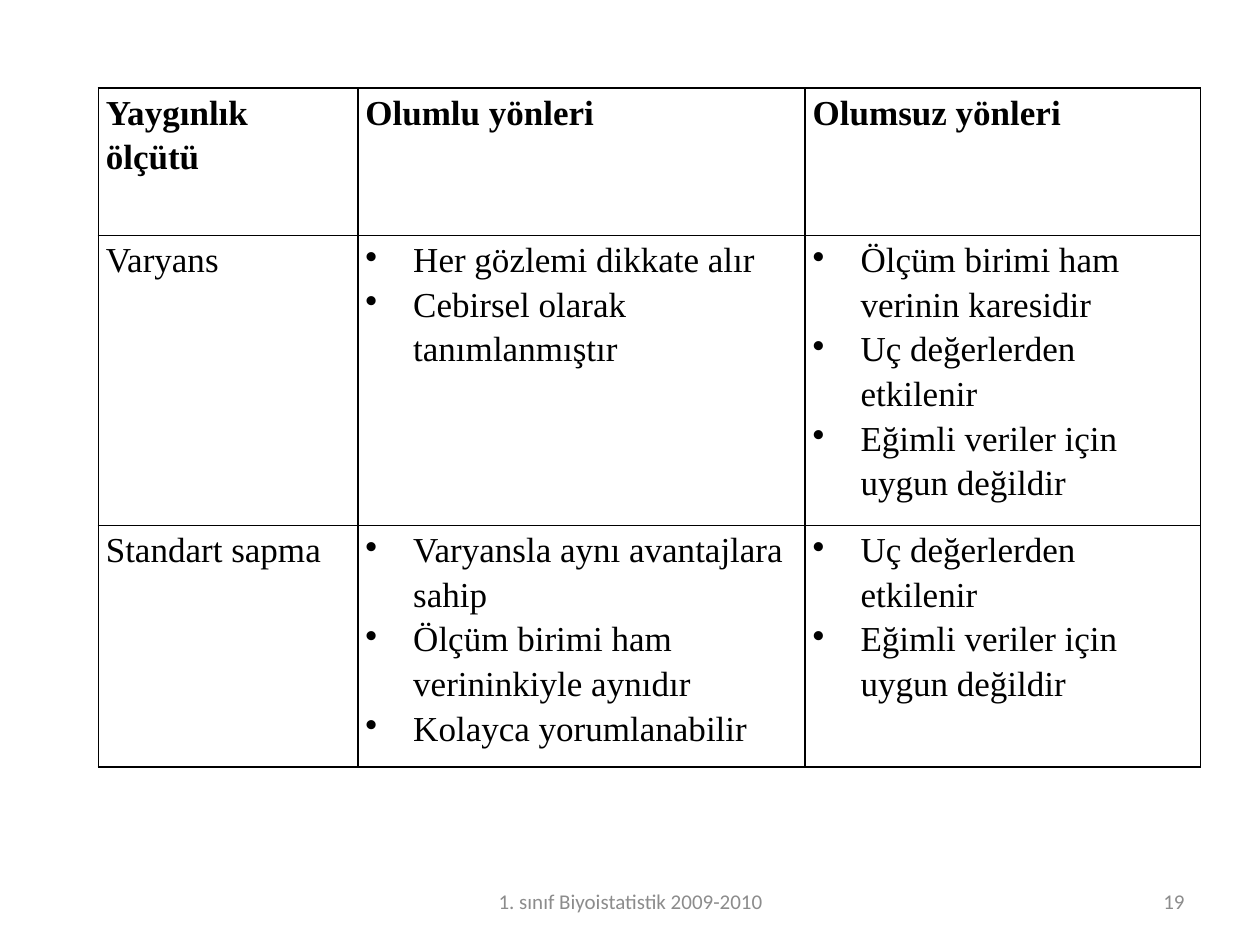
"""Build a slide comparing measures of spread in a table."""
from dataclasses import dataclass

from lxml import etree
from pptx import Presentation, util as u
from pptx.dml.color import RGBColor
from pptx.enum import text
from pptx.oxml import ns


@dataclass(frozen=True)
class Theme:
    ink: RGBColor = RGBColor(0, 0, 0)
    gray: RGBColor = RGBColor(0x8C, 0x8C, 0x8C)
    serif: str = "Times New Roman"
    sans: str = "Calibri"
    body: int = 20
    small: int = 12
    rule: int = 1


@dataclass(frozen=True)
class Note:
    words: str
    left: float
    width: float
    align: text.PP_ALIGN


@dataclass(frozen=True)
class Entry:
    name: str
    pros: tuple[str, ...]
    cons: tuple[str, ...]
    height: float


THEME = Theme()
HEAD = ("Yaygınlık\nölçütü", "Olumlu yönleri", "Olumsuz yönleri")
HEAD_HIGH = 1.17
COLS = (2.06, 3.55, 3.14)
SHARED = ("Uç değerlerden etkilenir", "Eğimli veriler için uygun değildir")
ROWS = (
    Entry("Varyans",
          ("Her gözlemi dikkate alır", "Cebirsel olarak tanımlanmıştır"),
          ("Ölçüm birimi ham verinin karesidir", *SHARED), 1.93),
    Entry("Standart sapma",
          ("Varyansla aynı avantajlara sahip",
           "Ölçüm birimi ham verininkiyle aynıdır",
           "Kolayca yorumlanabilir"),
          SHARED, 1.61),
)
NOTES = (
    Note("19", 7.17, 2.33, text.PP_ALIGN.RIGHT),
    Note("1. sınıf Biyoistatistik 2009-2010", 3.42, 3.17, text.PP_ALIGN.CENTER),
)


def style(font, face: str, size: int, color: RGBColor, bold: bool = False) -> None:
    """Set the look of a font."""
    font.name, font.size, font.bold = face, u.Pt(size), bold
    font.color.rgb = color


def add_note(slide, note: Note) -> None:
    """Add one footer text."""
    box = slide.shapes.add_textbox(
        u.Inches(note.left), u.Inches(6.95), u.Inches(note.width), u.Inches(0.4))
    frame = box.text_frame
    frame.word_wrap = True
    frame.vertical_anchor = text.MSO_ANCHOR.MIDDLE
    frame.text = note.words
    para = frame.paragraphs[0]
    para.alignment = note.align
    style(para.runs[0].font, THEME.sans, THEME.small, THEME.gray)


def add_rules(cell) -> None:
    """Draw the four borders of a cell."""
    props = cell._tc.get_or_add_tcPr()
    for side in ("lnL", "lnR", "lnT", "lnB"):
        line = etree.SubElement(props, ns.qn(f"a:{side}"), w=str(u.Pt(THEME.rule)))
        fill = etree.SubElement(line, ns.qn("a:solidFill"))
        etree.SubElement(fill, ns.qn("a:srgbClr"), val=str(THEME.ink))


def add_bullet(para) -> None:
    """Give a paragraph a hanging bullet."""
    props = para._p.get_or_add_pPr()
    indent = u.Inches(0.38)
    props.set("marL", str(indent))
    props.set("indent", str(-indent))
    etree.SubElement(props, ns.qn("a:buChar"), char="•")


def fill_cell(cell, words: str, bold: bool = False, listed: bool = False) -> None:
    """Write and format one table cell."""
    cell.margin_left = cell.margin_right = u.Inches(0.06)
    cell.margin_top = cell.margin_bottom = u.Inches(0)
    add_rules(cell)
    cell.fill.background()
    cell.text_frame.text = words
    for para in cell.text_frame.paragraphs:
        para.line_spacing = 1.15
        if listed:
            add_bullet(para)
        for run in para.runs:
            style(run.font, THEME.serif, THEME.body, THEME.ink, bold)


def add_grid(slide) -> None:
    """Add the comparison table."""
    highs = (HEAD_HIGH, *(row.height for row in ROWS))
    grid = slide.shapes.add_table(
        len(highs), len(COLS), u.Inches(0.78), u.Inches(0.7),
        u.Inches(sum(COLS)), u.Inches(sum(highs))).table
    grid.horz_banding = False
    for col, width in zip(grid.columns, COLS):
        col.width = u.Inches(width)
    for row, high in zip(grid.rows, highs):
        row.height = u.Inches(high)
    for col, words in enumerate(HEAD):
        fill_cell(grid.cell(0, col), words, bold=True)
    for row, entry in enumerate(ROWS, 1):
        fill_cell(grid.cell(row, 0), entry.name)
        for col, points in enumerate((entry.pros, entry.cons), 1):
            fill_cell(grid.cell(row, col), "\n".join(points), listed=True)


def main() -> None:
    """Build and save the deck."""
    deck = Presentation()
    deck.slide_width, deck.slide_height = u.Inches(10), u.Inches(7.5)
    slide = deck.slides.add_slide(deck.slide_layouts[6])
    for note in NOTES:
        add_note(slide, note)
    add_grid(slide)
    deck.save("out.pptx")


if __name__ == "__main__":
    main()
